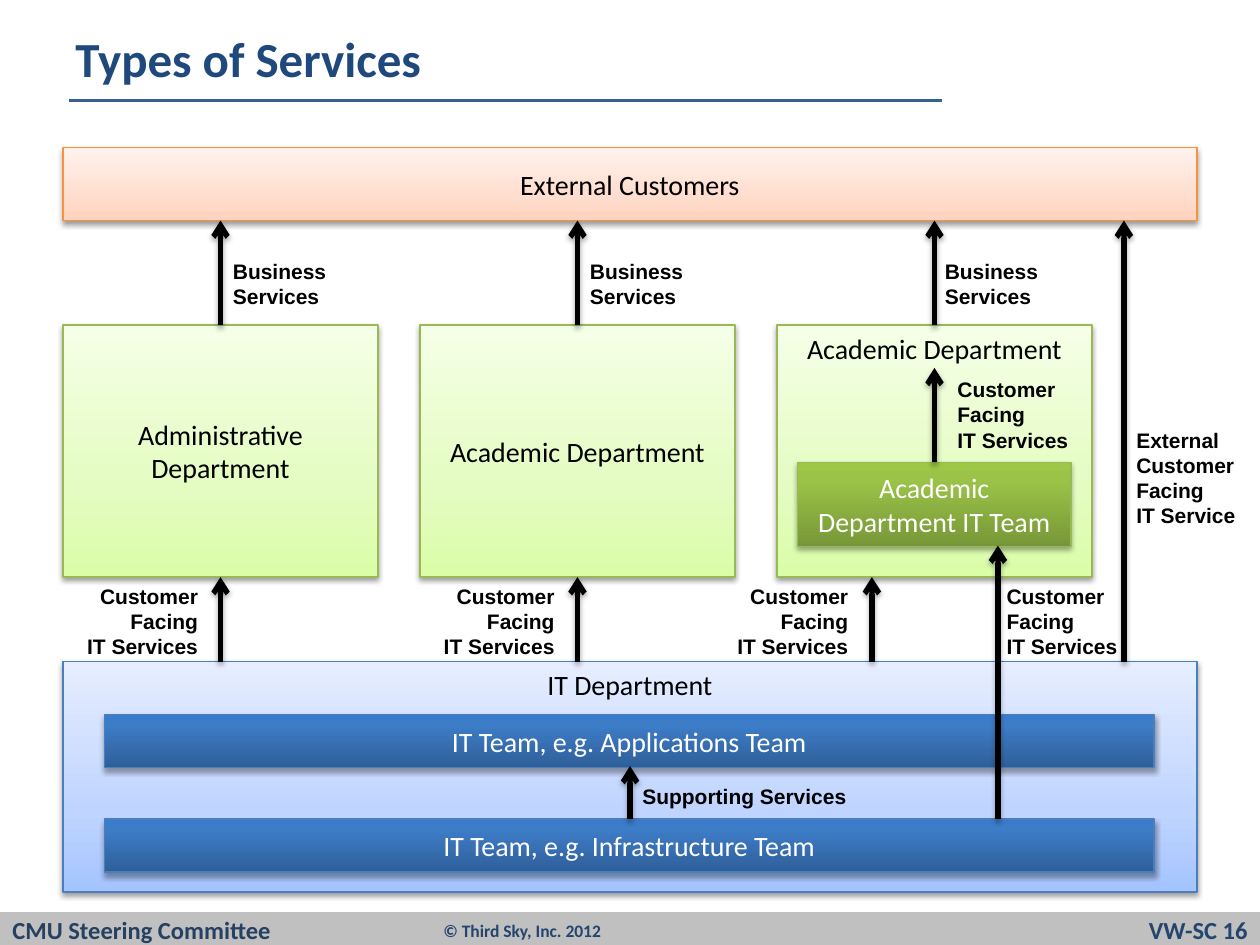
from copy import deepcopy
from typing import NamedTuple

from lxml import etree
from pptx import Presentation, util as u
from pptx.dml.color import RGBColor
from pptx.enum import shapes, text
from pptx.oxml.ns import qn

MID, TOP = text.MSO_ANCHOR.MIDDLE, text.MSO_ANCHOR.TOP
LEFT, MIDST, RIGHT = text.PP_ALIGN.LEFT, text.PP_ALIGN.CENTER, text.PP_ALIGN.RIGHT
COLS = [0.5 + i * 17 / 6 for i in range(3)]
MIDS = [x + 1.25 for x in COLS]
FACING = "Customer Facing\vIT Services"


class Look(NamedTuple):
    stops: list[tuple[float, str]]
    line: str
    ink: str
    dim: int
    drop: float


class Box(NamedTuple):
    words: str
    left: float
    top: float
    width: float
    height: float
    look: Look
    anchor: text.MSO_ANCHOR = MID


class Label(NamedTuple):
    words: str
    left: float
    top: float
    width: float
    height: float
    size: int = 12
    ink: str = "000000"
    font: str = "Arial"
    align: text.PP_ALIGN = LEFT
    anchor: text.MSO_ANCHOR = TOP


class Arrow(NamedTuple):
    x: float
    start: float
    end: float


PEACH = Look([(0, "FFD2BD"), (0.35, "FFDED0"), (1, "FFF2ED")], "F69240", "000000", 38, 1.6)
LIME = Look([(0, "DAFDA7"), (0.35, "E4FCC2"), (1, "F5FFE7")], "98B955", "000000", 38, 1.6)
SKY = Look([(0, "A4C4FF"), (0.35, "BFD4FF"), (1, "E6EEFF")], "4B7EBC", "000000", 38, 1.6)
BLUE = Look([(0, "2F5F99"), (0.8, "3D7CC7"), (1, "3A7CCB")], "4B7EBC", "FFFFFF", 35, 1.8)
GREEN = Look([(0, "779737"), (0.8, "9BC348"), (1, "9DC746")], "98B955", "FFFFFF", 35, 1.8)

BOXES = [
    Box("External Customers", 0.5, 1.17, 9, 0.58, PEACH),
    Box("Administrative Department", COLS[0], 2.58, 2.5, 2, LIME),
    Box("Academic Department", COLS[1], 2.58, 2.5, 2, LIME),
    Box("Academic Department", COLS[2], 2.58, 2.5, 2, LIME, TOP),
    Box("Academic Department IT Team", 6.33, 3.67, 2.17, 0.67, GREEN),
    Box("IT Department", 0.5, 5.25, 9, 1.83, SKY, TOP),
    Box("IT Team, e.g. Applications Team", 0.83, 5.67, 8.33, 0.42, BLUE),
    Box("IT Team, e.g. Infrastructure Team", 0.83, 6.5, 8.33, 0.42, BLUE),
]

ARROWS = [Arrow(x, 2.58, 1.75) for x in MIDS]
ARROWS += [Arrow(x, 5.25, 4.58) for x in (*MIDS[:2], 6.92)]
ARROWS += [
    Arrow(5, 6.5, 6.08),
    Arrow(8.92, 5.25, 1.75),
    Arrow(MIDS[2], 3.67, 2.92),
    Arrow(7.92, 6.5, 4.33),
]

LABELS = [Label("Business Services", x, 2, 1.05, 0.5) for x in (*MIDS[:2], 7.4)]
LABELS += [Label(FACING, x, 4.58, 1.25, 0.71, align=RIGHT) for x in (0.42, 3.25, 5.58)]
LABELS += [
    Label(FACING, 7.5, 2.94, 1.25, 0.71),
    Label(FACING, 7.89, 4.58, 1.25, 0.71),
    Label("External Customer Facing\vIT Service", 8.92, 3.34, 1.13, 0.91),
    Label("Supporting Services", 5, 6.17, 1.84, 0.3),
    Label("Types of Services", 0.5, 0.17, 6.92, 0.58, 28, "1F497D", "Calibri", anchor=MID),
    Label("CMU Steering Committee", 0, 7.25, 2.92, 0.25, 14, "254061", "Calibri", anchor=MID),
    Label("VW-SC 16", 6.83, 7.25, 3.17, 0.25, 14, "23456E", "Calibri", RIGHT, MID),
    Label("© Third Sky, Inc. 2012", 3.42, 7.25, 4.08, 0.27, 10, "23456E", "Calibri", anchor=MID),
]


def tint(color, code: str) -> None:
    color.rgb = RGBColor.from_string(code)


def shade(props, dim: int, drop: float) -> None:
    cast = etree.SubElement(
        props.find(qn("a:effectLst")), qn("a:outerShdw"),
        blurRad=str(u.Pt(3.1)), dist=str(u.Pt(drop)), dir="5400000", rotWithShape="0")
    hue = etree.SubElement(cast, qn("a:srgbClr"), val="000000")
    etree.SubElement(hue, qn("a:alpha"), val=str(dim * 1000))


def write(frame, words: str, size: int, ink: str, font: str, align, anchor,
          bold: bool = False) -> None:
    frame.word_wrap = True
    frame.vertical_anchor = anchor
    frame.text = words
    para = frame.paragraphs[0]
    para.alignment = align
    para.font.size = u.Pt(size)
    para.font.name = font
    para.font.bold = bold
    tint(para.font.color, ink)


def place(slide, left: float, top: float, width: float, height: float):
    shape = slide.shapes.add_shape(
        shapes.MSO_SHAPE.RECTANGLE, *map(u.Inches, (left, top, width, height)))
    shape.shadow.inherit = False
    return shape


def draw_box(slide, box: Box) -> None:
    look = box.look
    shape = place(slide, box.left, box.top, box.width, box.height)
    shape.fill.gradient()
    shape.fill.gradient_angle = 90
    props = shape._element.spPr
    stops = props.find(".//" + qn("a:gsLst"))
    stops.append(deepcopy(stops[0]))
    for stop, (spot, code) in zip(shape.fill.gradient_stops, look.stops):
        stop.position = spot
        tint(stop.color, code)
    tint(shape.line.color, look.line)
    shape.line.width = u.Pt(0.75)
    shade(props, look.dim, look.drop)
    write(shape.text_frame, box.words, 16, look.ink, "Calibri", MIDST, box.anchor)


def draw_line(slide, x: float, y: float, far: float, end: float, code: str, width: float):
    line = slide.shapes.add_connector(
        shapes.MSO_CONNECTOR.STRAIGHT, *map(u.Inches, (x, y, far, end)))
    tint(line.line.color, code)
    line.line.width = u.Pt(width)
    etree.SubElement(line._element.spPr, qn("a:effectLst"))
    return line


def draw_arrow(slide, arrow: Arrow) -> None:
    line = draw_line(slide, arrow.x, arrow.start, arrow.x, arrow.end, "000000", 3)
    etree.SubElement(line.get_or_add_ln(), qn("a:tailEnd"), type="arrow")
    shade(line._element.spPr, 35, 1.8)


def draw_label(slide, label: Label) -> None:
    area = slide.shapes.add_textbox(
        *map(u.Inches, (label.left, label.top, label.width, label.height)))
    write(area.text_frame, label.words, label.size, label.ink, label.font,
          label.align, label.anchor, True)


def main() -> None:
    deck = Presentation()
    deck.slide_width, deck.slide_height = u.Inches(10), u.Inches(7.5)
    slide = deck.slides.add_slide(deck.slide_layouts[6])
    draw_line(slide, 0.55, 0.8, 7.48, 0.8, "376092", 1.5)
    band = place(slide, 0, 7.24, 10, 0.26)
    band.fill.solid()
    tint(band.fill.fore_color, "C0C0C0")
    band.line.fill.background()
    for box in BOXES:
        draw_box(slide, box)
    for arrow in ARROWS:
        draw_arrow(slide, arrow)
    for label in LABELS:
        draw_label(slide, label)
    deck.save("out.pptx")


if __name__ == "__main__":
    main()
